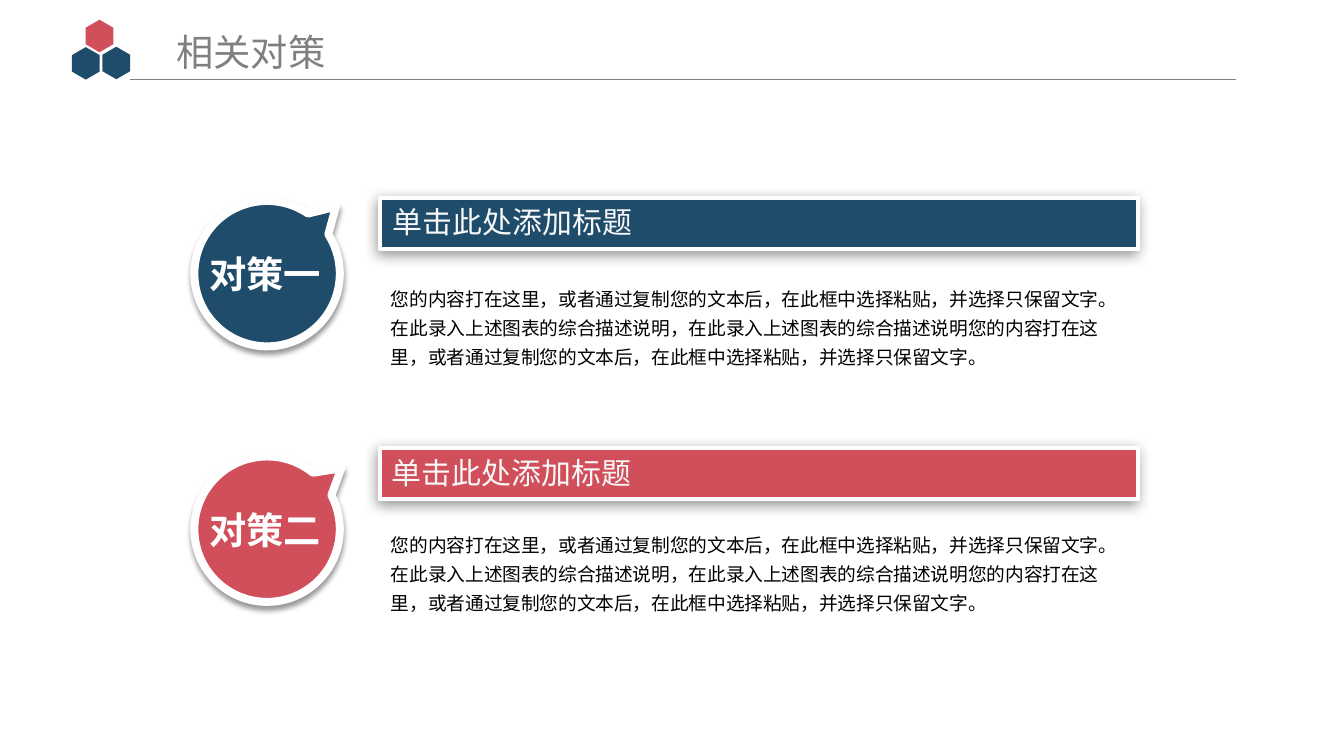
import math

import lxml.etree
import pptx
import pptx.dml.color
import pptx.enum.shapes
import pptx.enum.text
import pptx.oxml.ns
import pptx.util

FONT = "Noto Sans CJK SC"
NAVY, RED, WHITE, GREY = "1F4C6B", "D14E5B", "FFFFFF", "808080"
TITLE = "相关对策"
HEADING = "单击此处添加标题"
BODY = (
    "您的内容打在这里，或者通过复制您的文本后，在此框中选择粘贴，并选择只保留文字。"
    "在此录入上述图表的综合描述说明，在此录入上述图表的综合描述说明您的内容打在这里，"
    "或者通过复制您的文本后，在此框中选择粘贴，并选择只保留文字。"
)

# Positions and sizes are percentages of the slide's width or height.
MEASURES = [
    {"label": "对策一", "color": NAVY, "disc": 36.2, "turn": 45.8, "bar": 26.17,
     "heading": (28.52, 26.3), "body": 36.54},
    {"label": "对策二", "color": RED, "disc": 70, "turn": 50.6, "bar": 59.22,
     "heading": (28.45, 59.54), "body": 69.08},
]
HEXAGONS = [(5.17, 6.55, NAVY), (6.19, 2.93, RED), (7.44, 6.5, NAVY)]
HEXAGON_SIZE = (2.42, 3.67)
RULE_LEFT, RULE_RIGHT, RULE_TOP = 9.67, 92, 10.49
BAR_LEFT, BAR_WIDTH, BAR_HEIGHT = 28.31, 56.4, 6.83
HEADING_SIZE = (45.38, 6.07)
BODY_HEIGHT = 13.02
DISC_CENTER, DISC_RADIUS = 19.87, 5.41
LABEL_LEFT, LABEL_WIDTH, LABEL_HEIGHT = 14.58, 10.32, 7.21
TAIL_HALF_ANGLE, TAIL_REACH, ARC_COUNT = 11.5, 1.32, 4

presentation = pptx.Presentation()
presentation.slide_width = pptx.util.Inches(14.06)
presentation.slide_height = pptx.util.Inches(7.91)
slide = presentation.slides.add_slide(presentation.slide_layouts[6])
shapes = slide.shapes


def across(share):
    return round(presentation.slide_width * share / 100)


def down(share):
    return round(presentation.slide_height * share / 100)


def place(left, top, width, height):
    return across(left), down(top), across(width), down(height)


def rgb(color):
    return pptx.dml.color.RGBColor.from_string(color)


def add_element(parent, tag, **attributes):
    return lxml.etree.SubElement(parent, pptx.oxml.ns.qn(tag), attributes)


def paint(shape, color, border=0):
    shape.shadow.inherit = False
    shape.fill.solid()
    shape.fill.fore_color.rgb = rgb(color)
    if border:
        shape.line.color.rgb = rgb(WHITE)
        shape.line.width = pptx.util.Pt(border)
    else:
        shape.line.fill.background()


def add_shadow(shape, blur, distance, angle):
    """Cast a 40 % black shadow; blur and distance in points, angle in degrees."""
    effects = shape._element.spPr.find(pptx.oxml.ns.qn("a:effectLst"))
    shadow = add_element(
        effects, "a:outerShdw", blurRad=str(pptx.util.Pt(blur)),
        dist=str(pptx.util.Pt(distance)), dir=str(angle * 60000),
        algn="ctr", rotWithShape="0")
    color = add_element(shadow, "a:srgbClr", val="000000")
    add_element(color, "a:alpha", val="40000")


def add_text(text, box, size, color, wrap=True, bold=False, spacing=None, centered=False,
             inset=0.1):
    frame = shapes.add_textbox(*place(*box)).text_frame
    frame.word_wrap = wrap
    frame.margin_left = frame.margin_right = pptx.util.Inches(inset)
    paragraph = frame.paragraphs[0]
    paragraph.text = text
    if spacing:
        paragraph.line_spacing = spacing
    if centered:
        frame.vertical_anchor = pptx.enum.text.MSO_ANCHOR.MIDDLE
        paragraph.alignment = pptx.enum.text.PP_ALIGN.CENTER
    paragraph.font.size = pptx.util.Pt(size)
    paragraph.font.bold = bold
    paragraph.font.color.rgb = rgb(color)
    paragraph.font.name = FONT
    properties = paragraph._p.get_or_add_pPr()
    properties.set("hangingPunct", "0")
    add_element(properties.get_or_add_defRPr(), "a:ea", typeface=FONT)


def add_disc(center_share, turn):
    """Draw a round bubble with its tail on top, then turn it clockwise about the disc."""
    radius = across(DISC_RADIUS)
    offset = radius * (TAIL_REACH - 1) / 2
    center_x = across(DISC_CENTER) + offset * math.sin(math.radians(turn))
    center_y = down(center_share) + offset * (1 - math.cos(math.radians(turn)))

    def point(angle, handle=0):
        """Give the point at an angle from the tail, moved along the tangent."""
        sine, cosine = math.sin(math.radians(angle)), math.cos(math.radians(angle))
        return (round(center_x + radius * (sine + handle * cosine)),
                round(center_y - radius * (cosine - handle * sine)))

    sweep = (360 - 2 * TAIL_HALF_ANGLE) / ARC_COUNT
    handle = 4 / 3 * math.tan(math.radians(sweep / 4))
    points = [point(TAIL_HALF_ANGLE)]
    for index in range(ARC_COUNT):
        start = TAIL_HALF_ANGLE + index * sweep
        points += [point(start, handle), point(start + sweep, -handle), point(start + sweep)]
    builder = shapes.build_freeform(round(center_x), round(center_y - radius * TAIL_REACH))
    builder.add_line_segments(points, close=True)
    disc = builder.convert_to_shape()
    bend_arcs(disc)
    disc.rotation = turn
    return disc


def bend_arcs(shape):
    """Join every three segments after the first into one cubic curve."""
    segments = list(shape._element.spPr.iter(pptx.oxml.ns.qn("a:lnTo")))[1:]
    outline = segments[0].getparent()
    for first in range(0, len(segments), 3):
        curve = add_element(outline, "a:cubicBezTo")
        segments[first].addprevious(curve)
        for segment in segments[first:first + 3]:
            curve.append(segment[0])
            outline.remove(segment)


for left, top, color in HEXAGONS:
    hexagon = shapes.add_shape(
        pptx.enum.shapes.MSO_SHAPE.HEXAGON, *place(left, top, *HEXAGON_SIZE))
    hexagon.adjustments[0] = 0.29
    hexagon.rotation = 90
    paint(hexagon, color)

rule = shapes.add_connector(
    pptx.enum.shapes.MSO_CONNECTOR.STRAIGHT,
    across(RULE_LEFT), down(RULE_TOP), across(RULE_RIGHT), down(RULE_TOP))
rule.line.color.rgb = rgb(GREY)
rule.line.width = pptx.util.Pt(0.5)
add_element(rule._element.spPr, "a:effectLst")

for measure in MEASURES:
    bar = shapes.add_shape(
        pptx.enum.shapes.MSO_SHAPE.RECTANGLE,
        *place(BAR_LEFT, measure["bar"], BAR_WIDTH, BAR_HEIGHT))
    paint(bar, measure["color"], border=3)
    add_shadow(bar, blur=10, distance=3, angle=135)
    add_text(HEADING, (*measure["heading"], *HEADING_SIZE), 22.5, "F8F8F8")
    add_text(BODY, (BAR_LEFT, measure["body"], BAR_WIDTH, BODY_HEIGHT), 14.1, "000000",
             spacing=1.3, inset=0.11)

    disc = add_disc(measure["disc"], measure["turn"])
    paint(disc, measure["color"], border=6)
    add_shadow(disc, blur=4, distance=3, angle=90)
    label_top = measure["disc"] - LABEL_HEIGHT / 2
    add_text(measure["label"], (LABEL_LEFT, label_top, LABEL_WIDTH, LABEL_HEIGHT), 28.1,
             WHITE, wrap=False, bold=True, centered=True, inset=0.11)

add_text(TITLE, (12.42, 3.29, 12.66, 7.21), 28.1, GREY, wrap=False)

presentation.save("out.pptx")
